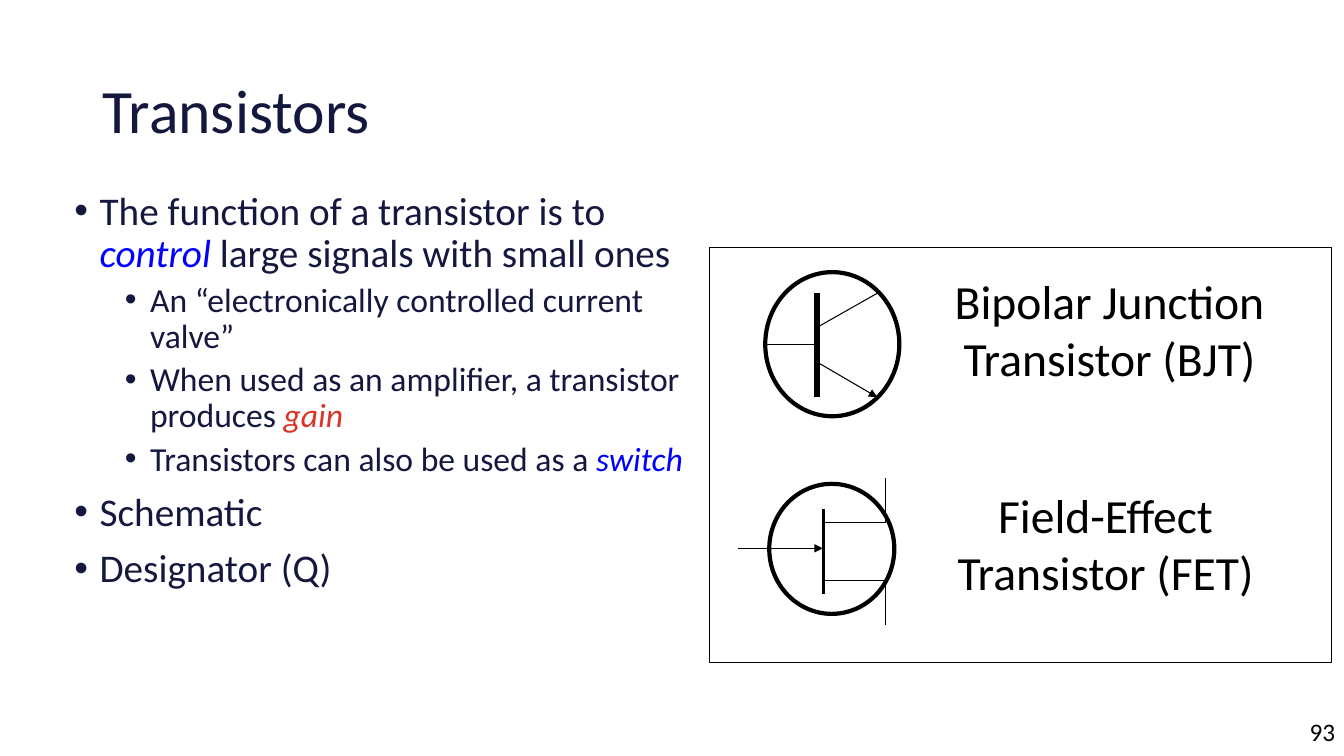
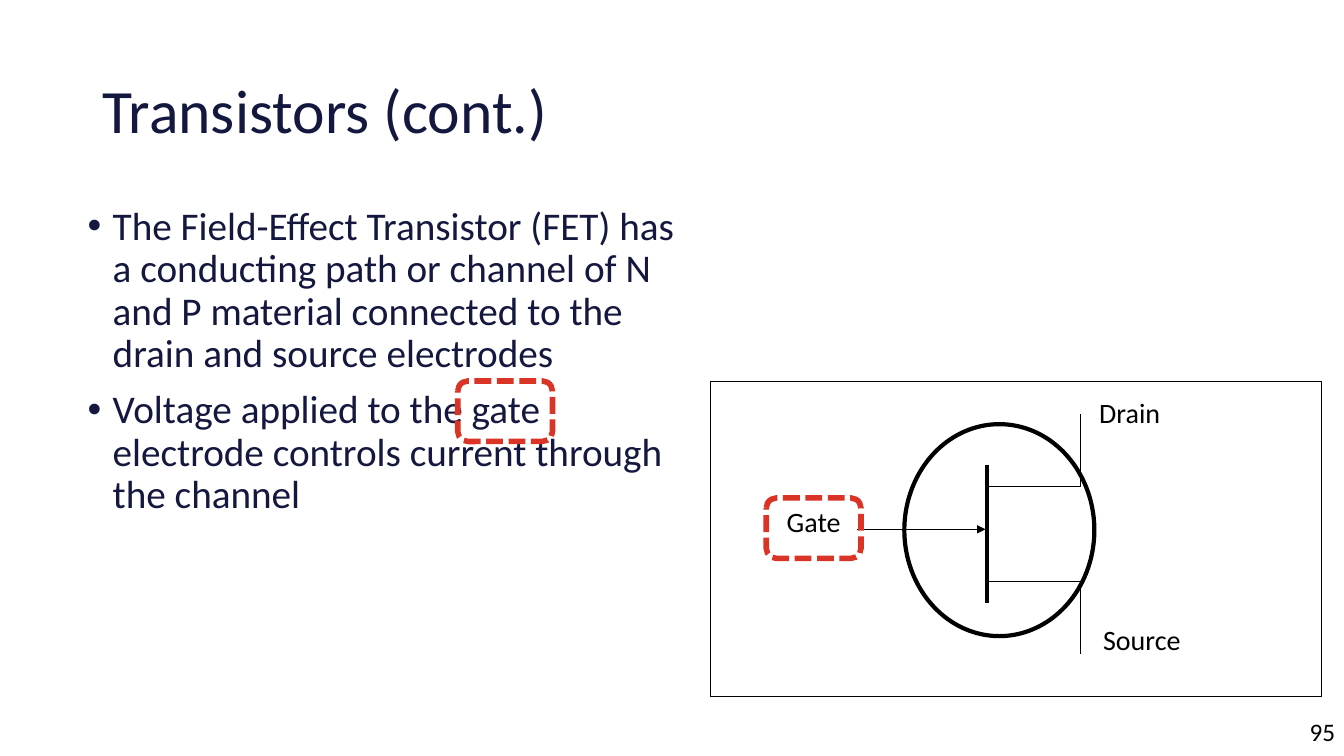
from lxml.etree import SubElement
from pptx import Presentation
from pptx.dml.color import RGBColor
from pptx.enum.dml import MSO_LINE
from pptx.enum.shapes import MSO_CONNECTOR, MSO_SHAPE
from pptx.enum.text import MSO_ANCHOR, PP_ALIGN
from pptx.oxml.ns import qn
from pptx.util import Inches, Pt

FONT = "Calibri"
NAVY, BLACK, WHITE, BLUE, RED = "14183F", "000000", "FFFFFF", "0000FF", "DA3427"
BULLET_STYLES = [(0.25, 28, 10), (0.75, 24, 5)]


def rgb(color):
    return RGBColor.from_string(color)


def set_font(font, size, color):
    font.name = FONT
    font.size = Pt(size)
    font.color.rgb = rgb(color)


def add_frame(slide, left, top, width, height):
    box = slide.shapes.add_textbox(Inches(left), Inches(top), Inches(width), Inches(height))
    box.text_frame.word_wrap = True
    return box.text_frame


def add_label(slide, text, box, size, align=PP_ALIGN.CENTER, color=BLACK):
    frame = add_frame(slide, *box)
    paragraph = frame.paragraphs[0]
    paragraph.text = text
    paragraph.alignment = align
    set_font(paragraph.font, size, color)
    return frame


def add_bullets(slide, box, items):
    frame = add_frame(slide, *box)
    for index, (level, runs) in enumerate(items):
        indent, size, space = BULLET_STYLES[level]
        paragraph = frame.paragraphs[0] if index == 0 else frame.add_paragraph()
        paragraph.level = level
        paragraph.line_spacing = 0.9
        paragraph.space_before = Pt(space if index else 0)
        properties = paragraph._p.get_or_add_pPr()
        properties.set("marL", str(Inches(indent)))
        properties.set("indent", str(Inches(-0.25)))
        SubElement(properties, qn("a:buFont"), typeface="Arial")
        SubElement(properties, qn("a:buChar"), char="•")
        set_font(paragraph.font, size, NAVY)
        for text, accent in runs:
            run = paragraph.add_run()
            run.text = text
            if accent:
                run.font.italic = True
                run.font.color.rgb = rgb(accent)


def set_outline(shape, weight, color=BLACK, fill=None):
    shape.shadow.inherit = False
    if fill:
        shape.fill.solid()
        shape.fill.fore_color.rgb = rgb(fill)
    else:
        shape.fill.background()
    shape.line.color.rgb = rgb(color)
    shape.line.width = Pt(weight)


def add_outline(slide, preset, box, weight, color=BLACK, fill=None):
    shape = slide.shapes.add_shape(preset, *map(Inches, box))
    set_outline(shape, weight, color, fill)
    return shape


def add_panel(slide, box):
    add_outline(slide, MSO_SHAPE.RECTANGLE, box, 0.5, fill=WHITE)


def add_highlight(slide, left, top):
    highlight = add_outline(slide, MSO_SHAPE.ROUNDED_RECTANGLE, (left, top, 0.94, 0.6), 4, RED)
    highlight.line.dash_style = MSO_LINE.SQUARE_DOT


def add_wire(slide, start, end, weight=0.75, arrow=False):
    wire = slide.shapes.add_connector(MSO_CONNECTOR.STRAIGHT, *map(Inches, (*start, *end)))
    wire.line.color.rgb = rgb(BLACK)
    wire.line.width = Pt(weight)
    if arrow:
        SubElement(wire.line._get_or_add_ln(), qn("a:tailEnd"), type="triangle")
    SubElement(wire._element.spPr, qn("a:effectLst"))


def add_bent_wire(slide, points):
    start, *rest = [(Inches(x), Inches(y)) for x, y in points]
    builder = slide.shapes.build_freeform(*start)
    builder.add_line_segments(rest, close=False)
    set_outline(builder.convert_to_shape(), 0.75)


def draw_bjt(slide):
    base_x, middle = 8.1, 3.42
    add_wire(slide, (base_x, 2.91), (base_x, 3.94), 4.5)
    add_wire(slide, (base_x, 3.59), (8.7, 3.94), arrow=True)
    add_wire(slide, (base_x, 3.25), (8.7, 2.91))
    add_outline(slide, MSO_SHAPE.OVAL, (7.59, 2.7, 1.33, 1.43), 3)
    add_wire(slide, (base_x, middle), (7.59, middle))


def draw_fet(slide, channel_x, middle, scale_x=1, scale_y=1):
    def at(dx, dy):
        return channel_x + dx * scale_x, middle + dy * scale_y

    add_wire(slide, at(0, -0.42), at(0, 0.42), 2.25)
    for side in (-1, 1):
        add_bent_wire(slide, [at(0, 0.29 * side), at(0.61, 0.29 * side), at(0.61, 0.73 * side)])
    add_outline(slide, MSO_SHAPE.OVAL, (*at(-0.54, -0.67), 1.24 * scale_x, 1.29 * scale_y), 3)
    add_wire(slide, at(-0.85, -0.03), at(-0.01, -0.03), arrow=True)


def add_slide(deck, title, number):
    slide = deck.slides.add_slide(deck.slide_layouts[6])
    add_label(slide, number, (12.66, 7.06, 0.68, 0.4), 18, PP_ALIGN.RIGHT)
    heading = add_label(slide, title, (0.92, 0.4, 11.5, 1.45), 44, PP_ALIGN.LEFT, NAVY)
    heading.vertical_anchor = MSO_ANCHOR.MIDDLE
    heading.paragraphs[0].line_spacing = 0.9
    return slide


def build_overview(deck):
    slide = add_slide(deck, "Transistors", "93")
    add_bullets(slide, (0.64, 1.85, 6.59, 5.25), [
        (0, [("The function of a transistor is to ", None), ("control", BLUE),
             (" large signals with small ones", None)]),
        (1, [("An “electronically controlled current valve”", None)]),
        (1, [("When used as an amplifier, a transistor produces ", None), ("gain", RED)]),
        (1, [("Transistors can also be used as a ", None), ("switch", BLUE)]),
        (0, [("Schematic", None)]),
        (0, [("Designator (Q)", None)]),
    ])
    add_panel(slide, (7.04, 2.45, 6.17, 4.12))
    draw_bjt(slide)
    draw_fet(slide, 8.17, 5.47)
    add_label(slide, "Bipolar Junction Transistor (BJT)", (9.07, 2.65, 3.87, 1.43), 34)
    add_label(slide, "Field-Effect Transistor (FET)", (8.97, 4.77, 3.99, 1.43), 34)


def build_fet_details(deck):
    slide = add_slide(deck, "Transistors (cont.)", "95")
    add_bullets(slide, (0.77, 2, 6.27, 4.76), [
        (0, [("The Field-Effect Transistor (FET) has a conducting path or channel of N and P "
              "material connected to the drain and source electrodes", None)]),
        (0, [("Voltage applied to the gate electrode controls current through the channel", None)]),
    ])
    add_panel(slide, (7.05, 3.78, 6.06, 3.13))
    for name, left, top, width in [("Drain", 10.45, 3.87, 1.51), ("Source", 10.45, 6.13, 1.75),
                                   ("Gate", 7.41, 4.96, 1.32)]:
        add_label(slide, name, (left, top, width, 0.44), 20)
    draw_fet(slide, 9.79, 5.3, 1.52, 1.63)
    add_highlight(slide, 4.54, 3.78)
    add_highlight(slide, 7.6, 4.94)


def main():
    deck = Presentation()
    deck.slide_width = Inches(13.33)
    deck.slide_height = Inches(7.5)
    build_overview(deck)
    build_fet_details(deck)
    deck.save("out.pptx")


if __name__ == "__main__":
    main()
